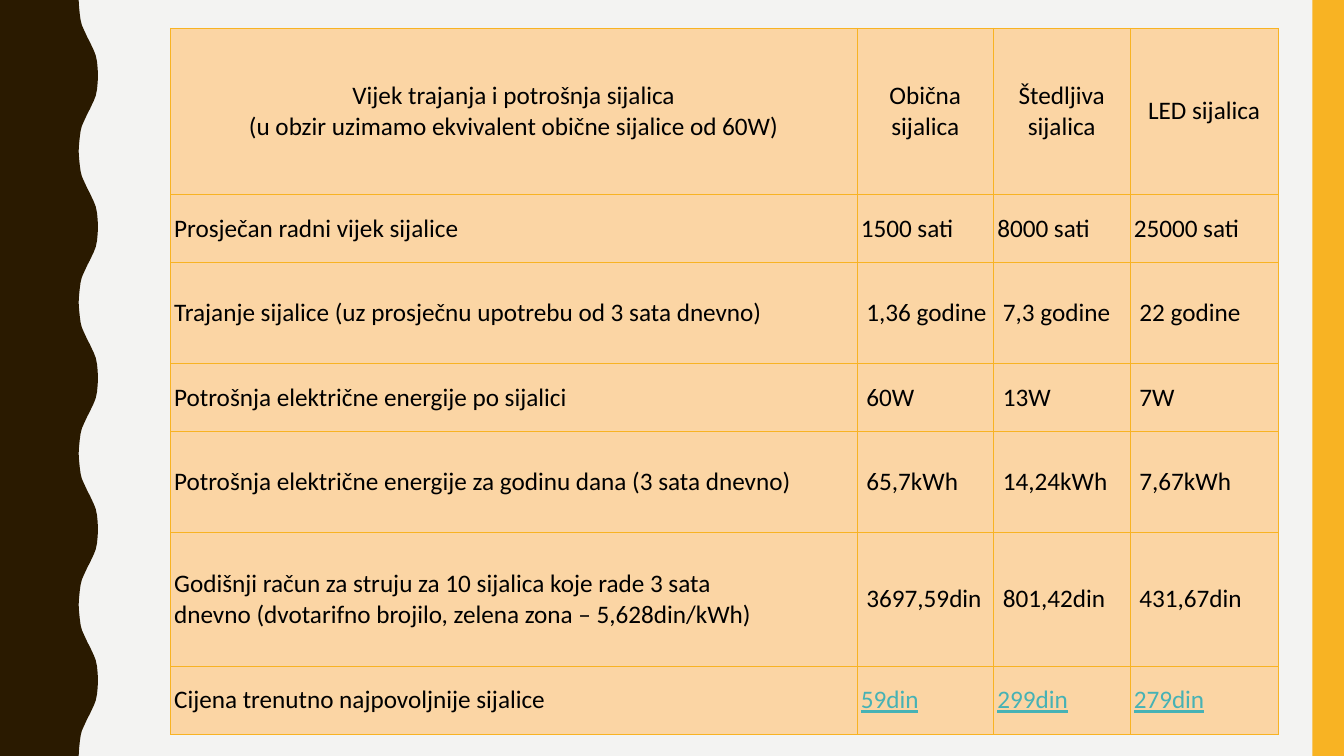
from pptx import Presentation
from pptx.util import Pt
from pptx.dml.color import RGBColor
from pptx.enum.shapes import MSO_SHAPE
from pptx.enum.text import PP_ALIGN, MSO_ANCHOR
from lxml.etree import SubElement
from pptx.oxml.ns import qn

HARD = chr(160)
ROWS = [
    ("Vijek trajanja i potrošnja sijalica\n(u obzir uzimamo ekvivalent obične sijalice od 60W)",
     "Obična sijalica", "Štedljiva sijalica", "LED sijalica"),
    ("Prosječan radni vijek sijalice", "1500 sati", "8000 sati", "25000 sati"),
    ("Trajanje sijalice (uz prosječnu upotrebu od 3 sata dnevno)",
     "~1,36~godine", "~7,3 godine", "~22 godine"),
    ("Potrošnja električne energije po sijalici", "~60W", "~13W", "~7W"),
    ("Potrošnja električne energije za godinu dana (3 sata dnevno)",
     "~65,7kWh", "~14,24kWh", "~7,67kWh"),
    ("Godišnji račun za struju za 10 sijalica koje rade 3 sata "
     "dnevno~(dvotarifno brojilo, zelena zona – 5,628din/kWh)",
     "~3697,59din", "~801,42din", "~431,67din"),
    ("Cijena trenutno najpovoljnije sijalice", "59din", "299din", "279din"),
]
WIDTHS = [490.5, 97.5, 97.5, 105.8]
HEIGHTS = [118.6, 48.8, 72, 48.8, 72, 95.5, 48.8]
CURVE = [(56.2, 0), (56.5, 5), (57, 10), (57.6, 14.4), (58.5, 18),
         (59.8, 21), (61.2, 24), (62.6, 27), (64.2, 30), (65.6, 33),
         (67, 36), (68.4, 39.6), (69.3, 44), (69.8, 49), (70, 54)]
WAVES, PERIOD = 5, 108
WIDE, HIGH = 960, 540

PAPER = RGBColor(0xF3, 0xF3, 0xF2)
BROWN = RGBColor(0x2A, 0x1A, 0x00)
GOLD = RGBColor(0xF8, 0xB3, 0x23)
PEACH = RGBColor(0xFB, 0xD5, 0xA4)
BLACK = RGBColor(0, 0, 0)
TEAL = RGBColor(0x46, 0xB2, 0xB5)


def paint(shape, color):
    shape.shadow.inherit = False
    shape.fill.solid()
    shape.fill.fore_color.rgb = color
    shape.line.fill.background()


def border(cell):
    props = cell._tc.get_or_add_tcPr()
    for side in ("a:lnL", "a:lnR", "a:lnT", "a:lnB"):
        line = SubElement(props, qn(side), w=str(Pt(0.5)))
        fill = SubElement(line, qn("a:solidFill"))
        SubElement(fill, qn("a:srgbClr"), val=str(GOLD))


def style(cell, text, head, price):
    border(cell)
    cell.fill.solid()
    cell.fill.fore_color.rgb = PEACH
    cell.vertical_anchor = MSO_ANCHOR.MIDDLE
    cell.margin_left = cell.margin_right = Pt(2.7)
    cell.margin_top = cell.margin_bottom = Pt(0.7)
    cell.text_frame.text = text.replace("~", HARD)
    for para in cell.text_frame.paragraphs:
        para.alignment = PP_ALIGN.CENTER if head else PP_ALIGN.LEFT
        for run in para.runs:
            font = run.font
            font.name, font.size, font.bold = "Calibri", Pt(18), False
            font.color.rgb = TEAL if price else BLACK
            if price:
                font.underline = True


deck = Presentation()
deck.slide_width, deck.slide_height = Pt(WIDE), Pt(HIGH)
slide = deck.slides.add_slide(deck.slide_layouts[6])
slide.background.fill.solid()
slide.background.fill.fore_color.rgb = PAPER
shapes = slide.shapes

cycle = CURVE + [(x, PERIOD - y) for x, y in CURVE[-2::-1]]
edge = [(Pt(x), Pt(y + n * PERIOD)) for n in range(WAVES) for x, y in cycle]
pen = shapes.build_freeform(0, 0)
pen.add_line_segments(edge + [(0, Pt(HIGH))], close=True)
paint(pen.convert_to_shape(), BROWN)

bar = shapes.add_shape(MSO_SHAPE.RECTANGLE, Pt(937.5), 0, Pt(22.5), Pt(HIGH))
paint(bar, GOLD)

table = shapes.add_table(len(ROWS), len(WIDTHS), Pt(121.7), Pt(20.2),
                         Pt(sum(WIDTHS)), Pt(sum(HEIGHTS))).table
table.first_row = table.horz_banding = False
for col, width in zip(table.columns, WIDTHS):
    col.width = Pt(width)
for row, height in zip(table.rows, HEIGHTS):
    row.height = Pt(height)
last = len(ROWS) - 1
for r, texts in enumerate(ROWS):
    for c, text in enumerate(texts):
        style(table.cell(r, c), text, r == 0, r == last and c > 0)

deck.save("out.pptx")
